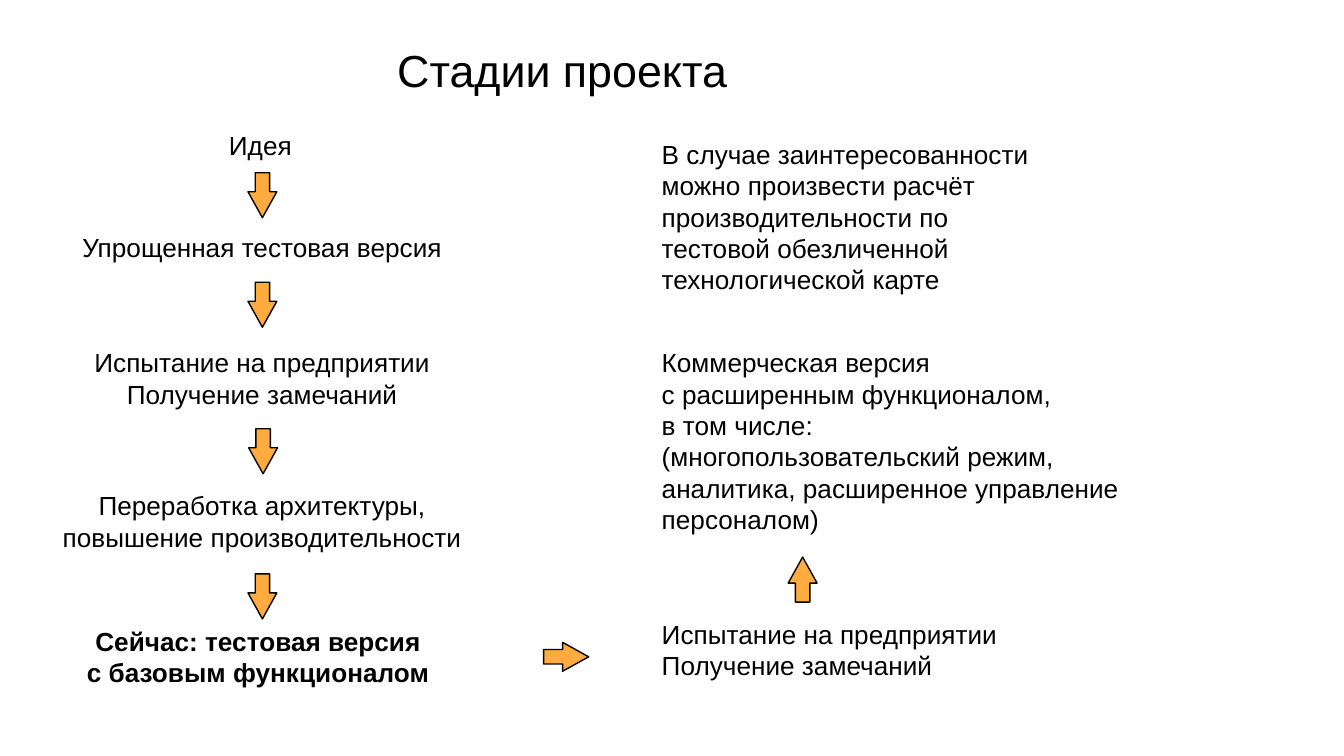
from pptx import Presentation
from pptx import util as u
from pptx.dml.color import RGBColor
from pptx.enum import shapes, text

PX = 4572
BLACK = RGBColor(0x00, 0x00, 0x00)
WHITE = RGBColor(0xFF, 0xFF, 0xFF)
ORANGE = RGBColor(0xFF, 0xAB, 0x40)
FONT = "Arial"
LEFT, CENTER = text.PP_ALIGN.LEFT, text.PP_ALIGN.CENTER
RIGHTWARD, DOWN, UP = 0, 90, 270
ARROW_SIZE = (67, 43)

DONE_STAGES = [
    ((252, 1, 138, 68), "Идея", LEFT, False),
    ((22, 152, 598, 68), "Упрощенная тестовая версия", CENTER, False),
    ((22, 324, 598, 114), "Испытание на предприятии\vПолучение замечаний", CENTER, False),
    ((0, 537, 642, 114), "Переработка архитектуры,\nповышение производительности", CENTER, False),
    ((0, 739, 630, 114), "Сейчас: тестовая версия\vс базовым функционалом", CENTER, True),
]
DONE_ARROWS = [(288, 87, DOWN), (288, 250, DOWN), (289, 468, DOWN), (288, 684, DOWN)]

NEXT_STAGES = [
    ((0, 0, 598, 256),
     "В случае заинтересованности можно произвести расчёт "
     "производительности по тестовой обезличенной технологической карте", LEFT, False),
    ((0, 310, 850, 302),
     "Коммерческая версия\vс расширенным функционалом,\vв том числе:\v"
     "(многопользовательский режим,\vаналитика, расширенное управление персоналом)", LEFT, False),
    ((0, 714, 598, 114), "Испытание на предприятии\vПолучение замечаний", LEFT, False),
]
NEXT_ARROWS = [(-156, 760, RIGHTWARD), (196, 645, UP)]


def emu(*lengths):
    return [length * PX for length in lengths]


def write(shape, content, size, align=LEFT, bold=False):
    frame = shape.text_frame
    frame.word_wrap = True
    frame.vertical_anchor = text.MSO_ANCHOR.TOP
    frame.text = content
    for para in frame.paragraphs:
        para.alignment = align
        for span in para.runs:
            span.font.name = FONT
            span.font.size = u.Pt(size)
            span.font.bold = bold
            span.font.color.rgb = BLACK


def add_title(page, box):
    title = page.shapes.title
    title.left, title.top, title.width, title.height = emu(*box)
    write(title, "Стадии проекта", 24)
    frame = title.text_frame
    frame.auto_size = text.MSO_AUTO_SIZE.NONE
    frame.margin_left = frame.margin_right = 20 * PX
    frame.margin_top = frame.margin_bottom = 20 * PX


def add_stage(page, box, content, align, bold):
    stage = page.shapes.add_textbox(*emu(*box))
    write(stage, content, 14, align, bold)
    stage.text_frame.auto_size = text.MSO_AUTO_SIZE.SHAPE_TO_FIT_TEXT


def add_arrow(page, left, top, rotation):
    arrow = page.shapes.add_shape(
        shapes.MSO_SHAPE.RIGHT_ARROW, *emu(left, top, *ARROW_SIZE))
    arrow.adjustments[0] = 0.5
    arrow.adjustments[1] = 0.9
    arrow.rotation = rotation
    arrow.shadow.inherit = False
    arrow.fill.solid()
    arrow.fill.fore_color.rgb = ORANGE
    arrow.line.color.rgb = BLACK
    arrow.line.width = u.Pt(0.75)


def add_column(page, left, top, stages, arrows):
    for (x, y, width, height), content, align, bold in stages:
        add_stage(page, (left + x, top + y, width, height), content, align, bold)
    for x, y, rotation in arrows:
        add_arrow(page, left + x, top + y, rotation)


def main():
    deck = Presentation()
    deck.slide_width, deck.slide_height = emu(2000, 1125)
    page = deck.slides.add_slide(deck.slide_layouts[5])
    page.background.fill.solid()
    page.background.fill.fore_color.rgb = WHITE
    add_title(page, (571, 44, 544, 112))
    add_column(page, 69, 182, DONE_STAGES, DONE_ARROWS)
    add_column(page, 965, 196, NEXT_STAGES, NEXT_ARROWS)
    deck.save("out.pptx")


if __name__ == "__main__":
    main()
